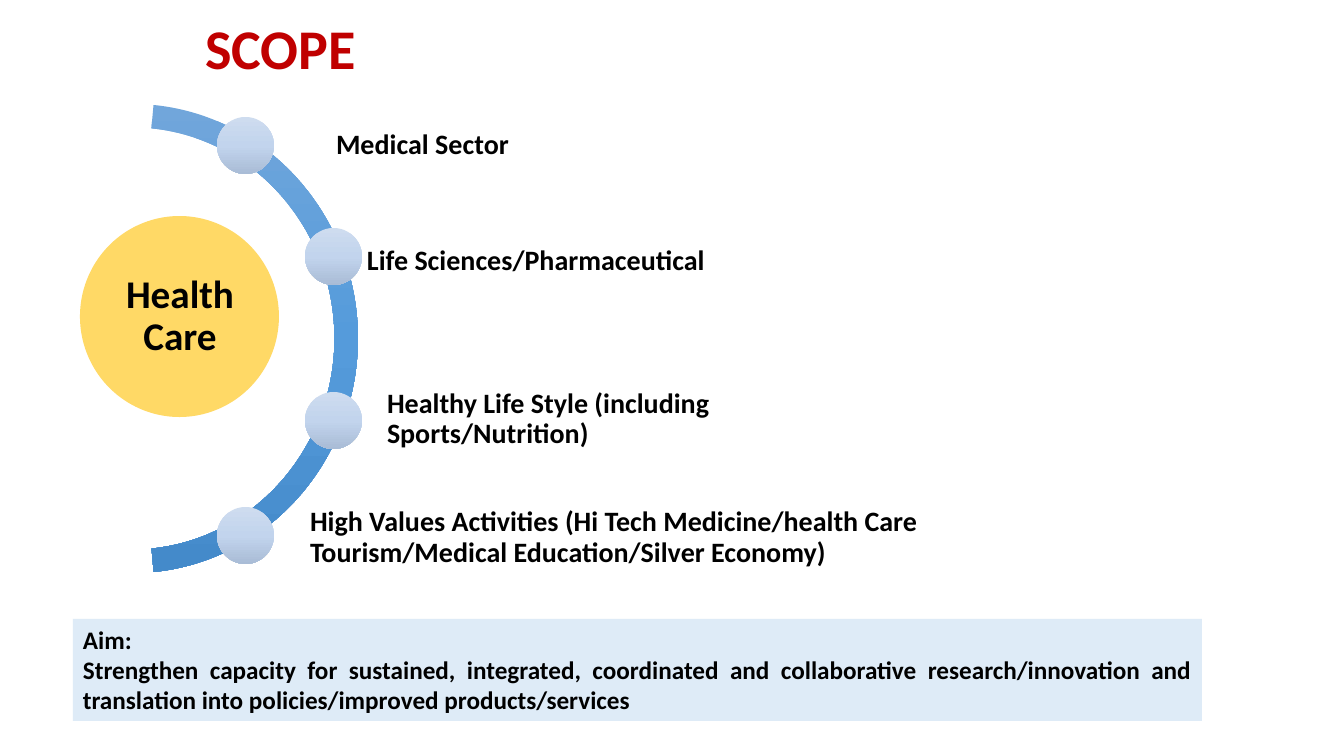
from copy import deepcopy

from pptx import Presentation
from pptx.dml.color import RGBColor
from pptx.enum.shapes import MSO_SHAPE
from pptx.enum.text import MSO_ANCHOR, MSO_AUTO_SIZE, PP_ALIGN
from pptx.oxml.ns import qn
from pptx.util import Emu, Pt

PX = 914400 / 100.8
BLACK = RGBColor(0x00, 0x00, 0x00)
RED = RGBColor(0xC0, 0x00, 0x00)
YELLOW = RGBColor(0xFF, 0xD9, 0x66)
PALE_BLUE = RGBColor(0xDE, 0xEB, 0xF7)
ARC_BLUES = [RGBColor(0x71, 0xA6, 0xDB), RGBColor(0x55, 0x9B, 0xDB), RGBColor(0x44, 0x8A, 0xCA)]
DOT_BLUES = [RGBColor(0xCE, 0xDC, 0xEF), RGBColor(0xC2, 0xD4, 0xED), RGBColor(0xA9, 0xBC, 0xD6)]


def add_filled(kind, left, top, width, height, colors):
    """Add an unlined shape; three colours make a top-to-bottom gradient."""
    shape = slide.shapes.add_shape(kind, *[Emu(round(n * PX)) for n in (left, top, width, height)])
    shape.shadow.inherit = False
    shape.line.fill.background()
    if len(colors) == 1:
        shape.fill.solid()
        shape.fill.fore_color.rgb = colors[0]
        return shape
    shape.fill.gradient()
    shape.fill.gradient_angle = 270
    stop_list = shape._element.spPr.find(qn("a:gradFill")).find(qn("a:gsLst"))
    stop_list.insert(1, deepcopy(stop_list[0]))
    for stop, color, position in zip(shape.fill.gradient_stops, colors, (0, 0.5, 1)):
        stop.color.rgb = color
        stop.position = position
    return shape


def write(frame, text, size, color=BLACK, align=PP_ALIGN.LEFT, spacing=1.0, inset=None):
    frame.text = text
    frame.word_wrap = True
    frame.auto_size = MSO_AUTO_SIZE.NONE
    frame.vertical_anchor = MSO_ANCHOR.TOP
    if inset is not None:
        frame.vertical_anchor = MSO_ANCHOR.MIDDLE
        frame.margin_left = frame.margin_right = Emu(round(inset * PX))
        frame.margin_top = frame.margin_bottom = Emu(round(inset * PX))
    for para in frame.paragraphs:
        para.alignment = align
        para.line_spacing = spacing
        for span in para.runs:
            span.font.name = "Calibri"
            span.font.size = Pt(size)
            span.font.bold = True
            span.font.color.rgb = color


deck = Presentation()
deck.slide_width = Emu(round(1344 * PX))
deck.slide_height = Emu(round(756 * PX))
slide = deck.slides.add_slide(deck.slide_layouts[5])

title = slide.shapes.title
title.left, title.top, title.width, title.height = [Emu(round(n * PX)) for n in (195, 8, 369, 78)]
write(title.text_frame, "SCOPE", 40, RED)
title.text_frame.paragraphs[0].space_before = Pt(6)
title.text_frame.paragraphs[0].space_after = Pt(6)

add_filled(MSO_SHAPE.OVAL, 80, 216, 199, 201, [YELLOW])
hub_label = slide.shapes.add_textbox(*[Emu(round(n * PX)) for n in (110, 246, 140, 142)])
write(hub_label.text_frame, "Health Care", 28, align=PP_ALIGN.CENTER, spacing=0.9, inset=4)

arc = add_filled(MSO_SHAPE.BLOCK_ARC, -93, 104, 451, 469, ARC_BLUES)
arc.adjustments[0] = 165.094
arc.adjustments[1] = 50.881
arc.adjustments[2] = 0.052

# Dot left and top, then label left, top and width
sectors = [
    (217, 117, 333, 87, 425, "Medical Sector"),
    (305, 228, 364, 203, 402, "Life Sciences/Pharmaceutical"),
    (305, 392, 384, 361, 530, "Healthy Life Style (including Sports/Nutrition)"),
    (217, 507, 307, 480, 730,
     "High Values Activities (Hi Tech Medicine/health Care Tourism/Medical Education/Silver Economy)"),
]
for dot_left, dot_top, left, top, width, text in sectors:
    add_filled(MSO_SHAPE.OVAL, dot_left, dot_top, 57, 57, DOT_BLUES)
    label = slide.shapes.add_textbox(*[Emu(round(n * PX)) for n in (left, top, width, 116)])
    write(label.text_frame, text, 20, spacing=0.9, inset=3)

aim = add_filled(MSO_SHAPE.RECTANGLE, 73, 619, 1129, 102, [PALE_BLUE])
write(
    aim.text_frame,
    "Aim:\nStrengthen capacity for sustained, integrated, coordinated and collaborative "
    "research/innovation and translation into policies/improved products/services",
    18, align=PP_ALIGN.JUSTIFY,
)

deck.save("out.pptx")
